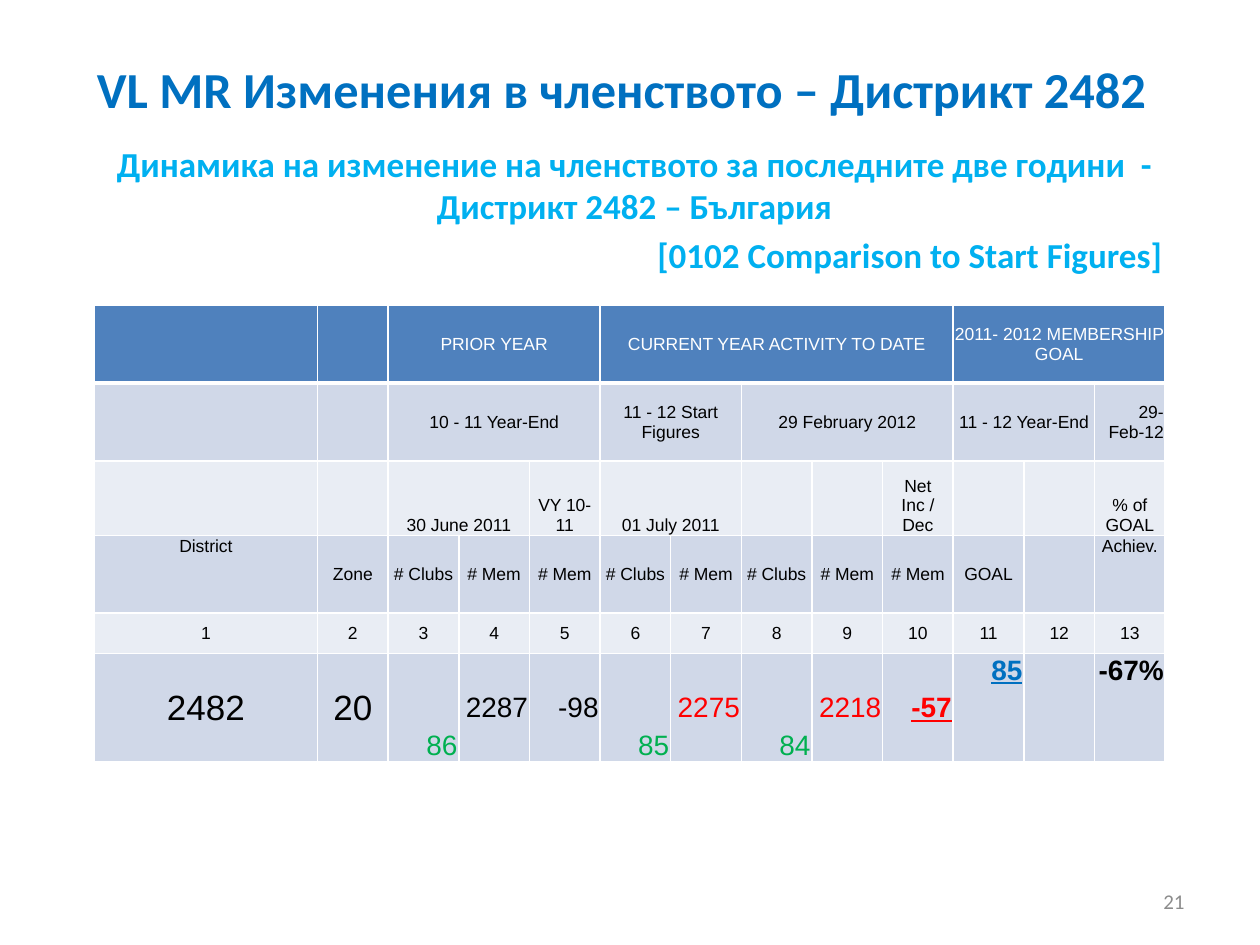
"""Build the slide on membership changes in District 2482."""
import dataclasses

import pptx
import pptx.dml.color
import pptx.enum.text
import pptx.oxml
import pptx.oxml.ns
import pptx.util

Cm = pptx.util.Cm
Pt = pptx.util.Pt
RGBColor = pptx.dml.color.RGBColor
Align = pptx.enum.text.PP_ALIGN
Anchor = pptx.enum.text.MSO_ANCHOR

BLUE = RGBColor(0x00, 0x70, 0xC0)
SKY = RGBColor(0x00, 0xB0, 0xF0)
GREY = RGBColor(0x8C, 0x8C, 0x8C)
WHITE = RGBColor(0xFF, 0xFF, 0xFF)
BLACK = RGBColor(0x00, 0x00, 0x00)
RED = RGBColor(0xFF, 0x00, 0x00)
GREEN = RGBColor(0x00, 0xB0, 0x50)
HEADER_FILL = RGBColor(0x4F, 0x81, 0xBD)
DARK_BAND = RGBColor(0xD0, 0xD8, 0xE8)
LIGHT_BAND = RGBColor(0xE9, 0xED, 0xF4)

TABLE_WIDTH = 21.59
DISTRICT_WIDTH = 4.5
COLUMN_COUNT = 13
ROW_HEIGHTS = [1.57, 1.57, 1.5, 1.57, 0.81, 2.18]


@dataclasses.dataclass
class Entry:
    """Text of one table cell with its span and look."""
    text: str = ""
    span: int = 1
    align: Align = Align.CENTER
    anchor: Anchor = Anchor.MIDDLE
    size: int = 10
    color: RGBColor = BLACK
    bold: bool = False
    underline: bool = False


def heading(text="", span=1):
    """Return a white entry of the top row."""
    return Entry(text, span, color=WHITE)


def low(text="", span=1):
    """Return an entry that stands at the bottom of its cell."""
    return Entry(text, span, anchor=Anchor.BOTTOM)


def figure(text, color=BLACK, anchor=Anchor.MIDDLE, bold=False, underline=False):
    """Return a large right-aligned membership figure."""
    return Entry(text, 1, Align.RIGHT, anchor, 16, color, bold, underline)


def membership_rows():
    """Return the entries of all table rows."""
    clubs, members = Entry("# Clubs"), Entry("# Mem")
    return [
        [heading(), heading(), heading("PRIOR YEAR", 3),
         heading("CURRENT YEAR ACTIVITY TO DATE", 5),
         heading("2011- 2012 MEMBERSHIP GOAL", 3)],
        [Entry(), Entry(), Entry("10 - 11 Year-End", 3),
         Entry("11 - 12 Start Figures", 2), Entry("29 February 2012", 3),
         Entry("11 - 12 Year-End", 2), Entry("29-Feb-12", align=Align.RIGHT)],
        [low(), low(), low("30 June 2011", 2), low("VY 10-11"),
         low("01 July 2011", 2), low(), low(), low("Net\nInc / Dec"),
         low(), low(), low("% of\nGOAL")],
        [Entry("District", anchor=Anchor.TOP), Entry("Zone"), clubs, members,
         members, clubs, members, clubs, members, members, Entry("GOAL"),
         Entry(), Entry("Achiev.", anchor=Anchor.TOP)],
        [Entry(str(number)) for number in range(1, COLUMN_COUNT + 1)],
        [Entry("2482", size=20), Entry("20", size=20),
         figure("86", GREEN, Anchor.BOTTOM), figure("2287"), figure("-98"),
         figure("85", GREEN, Anchor.BOTTOM), figure("2275", RED),
         figure("84", GREEN, Anchor.BOTTOM), figure("2218", RED),
         figure("-57", RED, bold=True, underline=True),
         figure("85", BLUE, Anchor.TOP, bold=True, underline=True),
         Entry(), figure("-67%", anchor=Anchor.TOP, bold=True)],
    ]


def add_run(paragraph, text, font_name, size, color, bold=False, underline=False):
    """Add one formatted run to a paragraph."""
    run = paragraph.add_run()
    run.text = text
    run.font.name = font_name
    run.font.size = Pt(size)
    run.font.color.rgb = color
    run.font.bold = bold
    run.font.underline = underline


def place(shape, left, top, width, height):
    """Move and size a shape by lengths in centimetres."""
    shape.left, shape.top = Cm(left), Cm(top)
    shape.width, shape.height = Cm(width), Cm(height)


def fill_frame(shape, lines, size, color, bold, anchor, space_before=0):
    """Write (text, alignment) lines into a shape, one paragraph each."""
    frame = shape.text_frame
    frame.word_wrap = True
    frame.auto_size = pptx.enum.text.MSO_AUTO_SIZE.NONE
    frame.vertical_anchor = anchor
    for index, (text, align) in enumerate(lines):
        paragraph = frame.add_paragraph() if index else frame.paragraphs[0]
        paragraph.alignment = align
        paragraph.space_before = Pt(space_before)
        add_run(paragraph, text, "Calibri", size, color, bold)


def set_borders(cell, top, bottom):
    """Give a cell white borders, with top and bottom widths in points."""
    properties = cell._tc.get_or_add_tcPr()
    for side, width in (("L", 1), ("R", 1), ("T", top), ("B", bottom)):
        properties.append(pptx.oxml.parse_xml(
            f'<a:ln{side} {pptx.oxml.ns.nsdecls("a")} w="{Pt(width)}">'
            f'<a:solidFill><a:srgbClr val="{WHITE}"/></a:solidFill></a:ln{side}>'))


def fill_cell(cell, entry):
    """Write an entry into a table cell."""
    cell.vertical_anchor = entry.anchor
    for index, line in enumerate(entry.text.split("\n") if entry.text else []):
        frame = cell.text_frame
        paragraph = frame.add_paragraph() if index else frame.paragraphs[0]
        paragraph.alignment = entry.align
        add_run(paragraph, line, "Arial", entry.size, entry.color,
                entry.bold, entry.underline)


def style_cell(cell, row_index):
    """Set the margins, borders and band colour of a cell."""
    cell.margin_left = cell.margin_right = cell.margin_top = Cm(0.03)
    cell.margin_bottom = 0
    set_borders(cell, 3 if row_index == 1 else 1, 3 if row_index == 0 else 1)
    cell.fill.solid()
    band = DARK_BAND if row_index % 2 else LIGHT_BAND
    cell.fill.fore_color.rgb = band if row_index else HEADER_FILL
    if row_index == len(ROW_HEIGHTS) - 1:
        cell.fill.fore_color.rgb = DARK_BAND


def add_membership_table(slide):
    """Add the table that compares membership with the start figures."""
    table = slide.shapes.add_table(
        len(ROW_HEIGHTS), COLUMN_COUNT, Cm(1.9), Cm(6.15),
        Cm(TABLE_WIDTH), Cm(sum(ROW_HEIGHTS))).table
    narrow_width = (TABLE_WIDTH - DISTRICT_WIDTH) / (COLUMN_COUNT - 1)
    for index, column in enumerate(table.columns):
        column.width = Cm(narrow_width if index else DISTRICT_WIDTH)
    for row_index, entries in enumerate(membership_rows()):
        table.rows[row_index].height = Cm(ROW_HEIGHTS[row_index])
        for cell in table.rows[row_index].cells:
            style_cell(cell, row_index)
        column_index = 0
        for entry in entries:
            cell = table.cell(row_index, column_index)
            column_index += entry.span
            if entry.span > 1:
                cell.merge(table.cell(row_index, column_index - 1))
            fill_cell(cell, entry)


def main():
    """Build and save the presentation."""
    presentation = pptx.Presentation()
    presentation.slide_width, presentation.slide_height = Cm(25.4), Cm(19.05)
    slide = presentation.slides.add_slide(presentation.slide_layouts[0])

    title = slide.shapes.title
    place(title, 1.7, 0.84, 22.66, 1.9)
    fill_frame(title, [("VL MR Изменения в членството – Дистрикт 2482", Align.LEFT)],
               28.8, BLUE, True, Anchor.MIDDLE)

    subtitle = slide.placeholders[1]
    place(subtitle, 1.9, 2.74, 21.79, 14.81)
    fill_frame(subtitle, [
        ("Динамика на изменение на членството за последните две години  - "
         "Дистрикт 2482 – България", Align.CENTER),
        ("[0102 Comparison to Start Figures]", Align.RIGHT),
    ], 20, SKY, True, Anchor.TOP, space_before=4)

    page_number = slide.shapes.add_textbox(Cm(18.21), Cm(17.65), Cm(5.92), Cm(1.02))
    fill_frame(page_number, [("21", Align.RIGHT)], 12, GREY, False, Anchor.MIDDLE)

    add_membership_table(slide)
    presentation.save("out.pptx")


if __name__ == "__main__":
    main()
